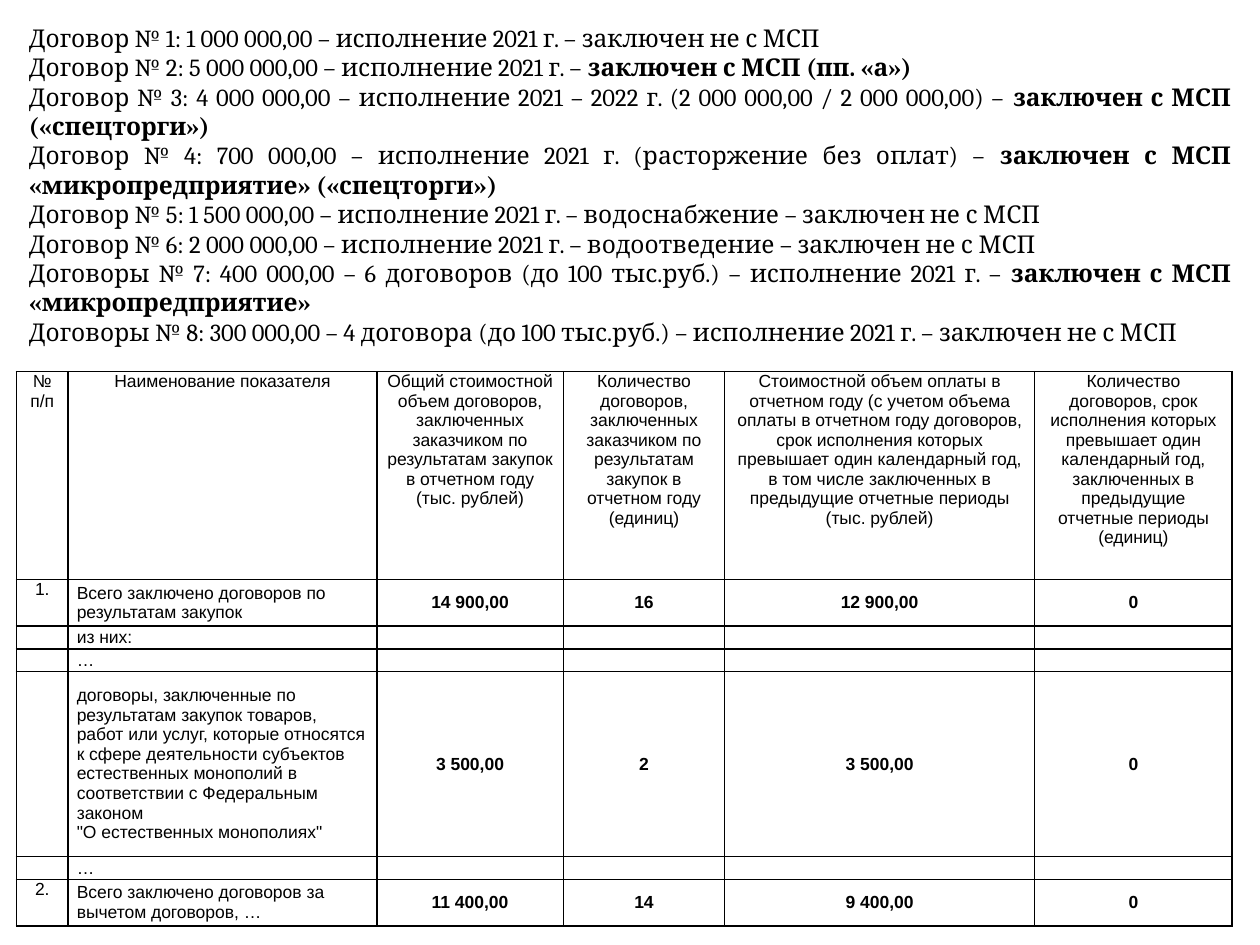
from lxml import etree
from pptx import Presentation
from pptx.dml.color import RGBColor
from pptx.enum.text import MSO_ANCHOR, MSO_AUTO_SIZE, PP_ALIGN
from pptx.oxml.ns import qn
from pptx.util import Pt

LEFT, CENTER, JUSTIFY = PP_ALIGN.LEFT, PP_ALIGN.CENTER, PP_ALIGN.JUSTIFY
TOP, MIDDLE = MSO_ANCHOR.TOP, MSO_ANCHOR.MIDDLE
BLACK = "000000"
BLANK_LAYOUT = 6


def add_text(paragraph, text, font="Arial", size=10, bold=False, color=BLACK):
    """Append text to the paragraph, with a line break at each newline."""
    for index, line in enumerate(text.split("\n")):
        if index:
            paragraph.add_line_break()
        run = paragraph.add_run()
        run.text = line
        run.font.name = font
        run.font.size = Pt(size)
        run.font.bold = bold
        run.font.color.rgb = RGBColor.from_string(color)


def set_borders(cell, color=BLACK, width=1):
    properties = cell._tc.get_or_add_tcPr()
    for position, side in enumerate(("a:lnL", "a:lnR", "a:lnT", "a:lnB")):
        line = etree.Element(qn(side), w=str(Pt(width)))
        fill = etree.SubElement(line, qn("a:solidFill"))
        etree.SubElement(fill, qn("a:srgbClr"), val=color)
        properties.insert(position, line)


presentation = Presentation()
presentation.slide_width, presentation.slide_height = Pt(720), Pt(540)
slide = presentation.slides.add_slide(presentation.slide_layouts[BLANK_LAYOUT])

# List of contracts: plain part, bold part
contracts = [
    ("Договор № 1: 1 000 000,00 – исполнение 2021 г. – заключен не с МСП", ""),
    ("Договор № 2: 5 000 000,00 – исполнение 2021 г. – ", "заключен с МСП (пп. «а»)"),
    ("Договор № 3: 4 000 000,00 – исполнение 2021 – 2022 г. (2 000 000,00 / 2 000 000,00) – ",
     "заключен с МСП («спецторги»)"),
    ("Договор № 4: 700 000,00 – исполнение 2021 г. (расторжение без оплат) – ",
     "заключен с МСП «микропредприятие» («спецторги»)"),
    ("Договор № 5: 1 500 000,00 – исполнение 2021 г. – водоснабжение – заключен не с МСП", ""),
    ("Договор № 6: 2 000 000,00 – исполнение 2021 г. – водоотведение – заключен не с МСП", ""),
    ("Договоры № 7: 400 000,00 – 6 договоров (до 100 тыс.руб.) – исполнение 2021 г. – ",
     "заключен с МСП «микропредприятие»"),
    ("Договоры № 8: 300 000,00 – 4 договора (до 100 тыс.руб.) – исполнение 2021 г. – "
     "заключен не с МСП", ""),
]
contract_box = slide.shapes.add_textbox(Pt(9.4), Pt(9.4), Pt(701.3), Pt(193.7))
text_frame = contract_box.text_frame
text_frame.word_wrap = True
text_frame.auto_size = MSO_AUTO_SIZE.SHAPE_TO_FIT_TEXT
for index, (plain, bold) in enumerate(contracts):
    paragraph = text_frame.add_paragraph() if index else text_frame.paragraphs[0]
    paragraph.alignment = JUSTIFY
    add_text(paragraph, plain, font="Cambria", size=14)
    if bold:
        add_text(paragraph, bold, font="Cambria", size=14, bold=True)

# Table of indicators
column_widths = [29.5, 176.4, 106.6, 92.2, 177.1, 113]
row_heights = [118.8, 26.6, 13, 13, 105.8, 13, 26.6]
rows = [
    ["№ п/п", "Наименование показателя",
     "Общий стоимостной объем договоров, заключенных заказчиком по результатам закупок "
     "в отчетном году (тыс. рублей)",
     "Количество договоров, заключенных заказчиком по результатам закупок "
     "в отчетном году (единиц)",
     "Стоимостной объем оплаты в отчетном году (с учетом объема оплаты в отчетном году "
     "договоров, срок исполнения которых превышает один календарный год, в том числе "
     "заключенных в предыдущие отчетные периоды (тыс. рублей)",
     "Количество договоров, срок исполнения которых превышает один календарный год, "
     "заключенных в предыдущие отчетные периоды (единиц)"],
    ["1.", "Всего заключено договоров по результатам закупок",
     "14 900,00", "16", "12 900,00", "0"],
    ["", "из них:", "", "", "", ""],
    ["", "…", "", "", "", ""],
    ["", "договоры, заключенные по результатам закупок товаров, работ или услуг, которые "
     "относятся к сфере деятельности субъектов естественных монополий в соответствии "
     "с Федеральным законом \n\"О естественных монополиях\"",
     "3 500,00", "2", "3 500,00", "0"],
    ["", "…", "", "", "", ""],
    ["2.", "Всего заключено договоров за вычетом договоров, …",
     "11 400,00", "14", "9 400,00", "0"],
]
table = slide.shapes.add_table(
    len(rows), len(column_widths), Pt(9.4), Pt(212.4),
    Pt(sum(column_widths)), Pt(sum(row_heights))).table
for column, width in zip(table.columns, column_widths):
    column.width = Pt(width)
for row, height in zip(table.rows, row_heights):
    row.height = Pt(height)

for row_index, texts in enumerate(rows):
    for column_index, text in enumerate(texts):
        cell = table.cell(row_index, column_index)
        is_body = row_index > 0
        cell.fill.background()
        set_borders(cell)
        cell.margin_left = cell.margin_right = Pt(5)
        cell.margin_top = cell.margin_bottom = 0
        cell.vertical_anchor = MIDDLE if is_body and column_index > 0 else TOP
        paragraph = cell.text_frame.paragraphs[0]
        paragraph.alignment = LEFT if is_body and column_index == 1 else CENTER
        if text:
            add_text(paragraph, text, bold=is_body and column_index > 1)
        else:  # keeps the low rows from growing
            paragraph._p.get_or_add_endParaRPr().set("sz", "1000")

presentation.save("out.pptx")
